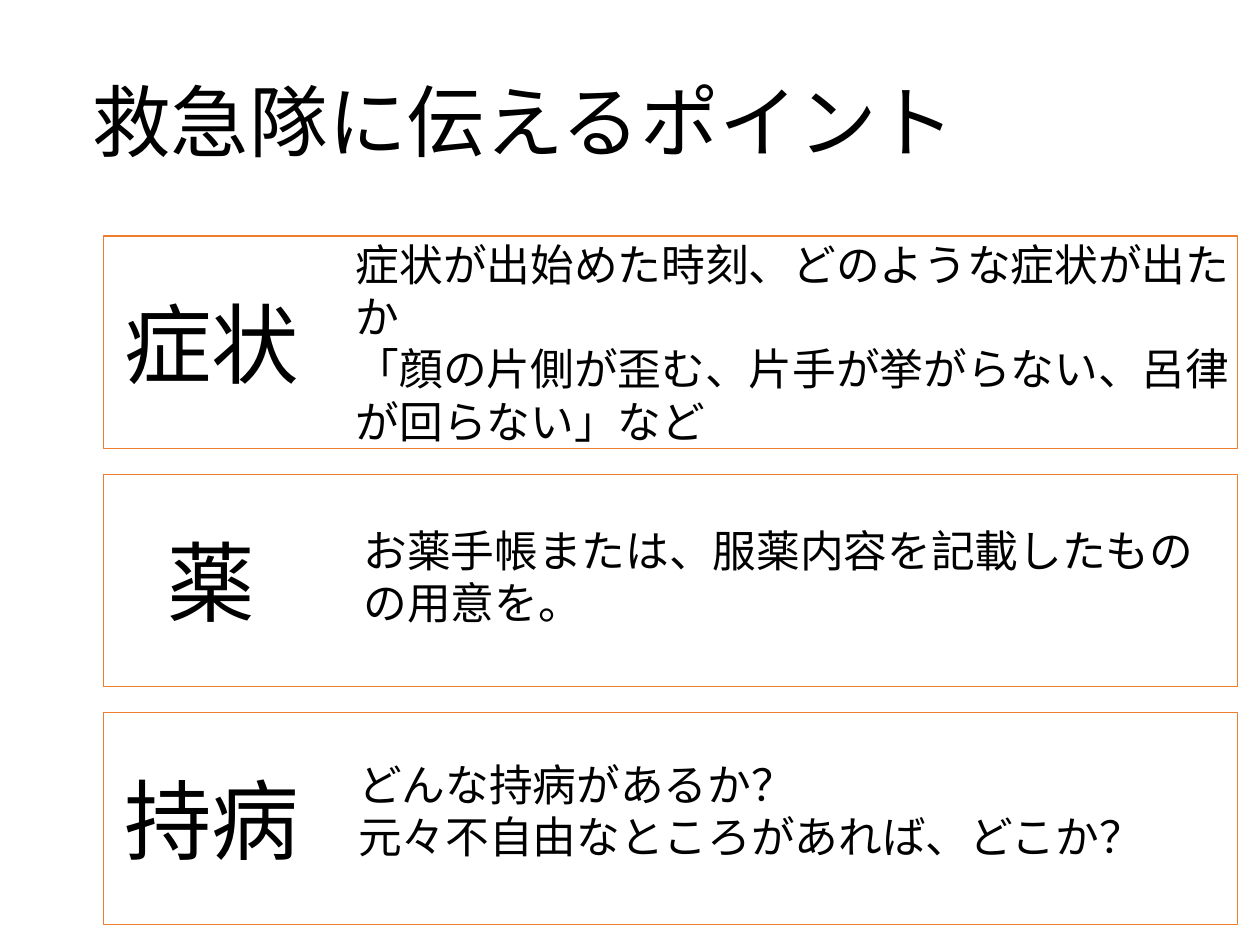
import pptx
import pptx.util
import pptx.dml.color
import pptx.enum.shapes
import pptx.enum.text
from lxml import etree
from pptx.util import Inches, Pt

anchor = pptx.enum.text.MSO_ANCHOR
align = pptx.enum.text.PP_ALIGN
rgb = pptx.dml.color.RGBColor

# Colours, fonts and type sizes
theme = {
    "ink": rgb.from_string("000000"),
    "frame": rgb.from_string("ED7D31"),
    "head": {"name": "Noto Sans CJK JP", "size": Pt(72)},
    "label": {"name": "Noto Sans CJK JP", "size": Pt(80)},
    "body": {"name": "Arial", "size": Pt(40)},
}


def write(box, lines, style, para, frame):
    text = box.text_frame
    for key, value in frame.items():
        setattr(text, key, value)
    text.text = "\n".join(lines)
    for item in text.paragraphs:
        for key, value in para.items():
            setattr(item, key, value)
        for run in item.runs:
            for key, value in theme[style].items():
                setattr(run.font, key, value)
            run.font.color.rgb = theme["ink"]
            # East Asian glyphs take the same font
            latin = run.font._element.find(pptx.oxml.ns.qn("a:latin"))
            east = etree.Element(pptx.oxml.ns.qn("a:ea"), typeface=run.font.name)
            latin.addnext(east)


deck = pptx.Presentation()
deck.slide_width, deck.slide_height = Inches(16.01), Inches(12.01)
slide = deck.slides.add_slide(deck.slide_layouts[5])

# Title
title = slide.shapes.title
place = {"left": 1.07, "top": 0.44, "width": 13.81, "height": 2.32}
for key, value in place.items():
    setattr(title, key, Inches(value))
write(title, ["救急隊に伝えるポイント"], "head",
      {"alignment": align.LEFT, "line_spacing": 0.9},
      {"vertical_anchor": anchor.MIDDLE, "word_wrap": True,
       "auto_size": pptx.enum.text.MSO_AUTO_SIZE.NONE})

# Rows: label, label size, body lines, body left, body size, body format
flush = dict.fromkeys(
    ("margin_left", "margin_right", "margin_top", "margin_bottom"), 0)
rows = [
    ("症状", (3.71, 2.25),
     ["症状が出始めた時刻、どのような症状が出たか",
      "「顔の片側が歪む、片手が挙がらない、呂律が回らない」など"],
     4.52, (11.21, 3.18), {**flush, "vertical_anchor": anchor.MIDDLE}),
    ("薬", (2.06, 1.17),
     ["お薬手帳または、服薬内容を記載したものの用意を。"],
     4.52, (11, 1.54), {}),
    ("持病", (4.04, 1.45),
     ["どんな持病があるか？", "元々不自由なところがあれば、どこか？"],
     4.55, (10.7, 1.54), flush),
]
first, pitch, tall, axis = 3, 3.025, 2.7, 2.69

for i, (label, size, lines, left, area, form) in enumerate(rows):
    top = first + i * pitch
    mid = top + tall / 2

    # Label, centred on the axis of the left column
    wide, high = size
    box = slide.shapes.add_textbox(
        Inches(axis - wide / 2), Inches(mid - high / 2),
        Inches(wide), Inches(high))
    write(box, [label], "label", {"alignment": align.CENTER},
          {"vertical_anchor": anchor.MIDDLE, "word_wrap": True})

    # Body text, centred on the row
    wide, high = area
    box = slide.shapes.add_textbox(
        Inches(left), Inches(mid - high / 2), Inches(wide), Inches(high))
    write(box, lines, "body", {"line_spacing": Pt(48)},
          {"word_wrap": True, **form})

    # Frame around the row
    frame = slide.shapes.add_shape(
        pptx.enum.shapes.MSO_SHAPE.RECTANGLE,
        Inches(1.31), Inches(top), Inches(14.41), Inches(tall))
    frame.shadow.inherit = False
    frame.fill.background()
    frame.line.color.rgb = theme["frame"]
    frame.line.width = Pt(1)

deck.save("out.pptx")
